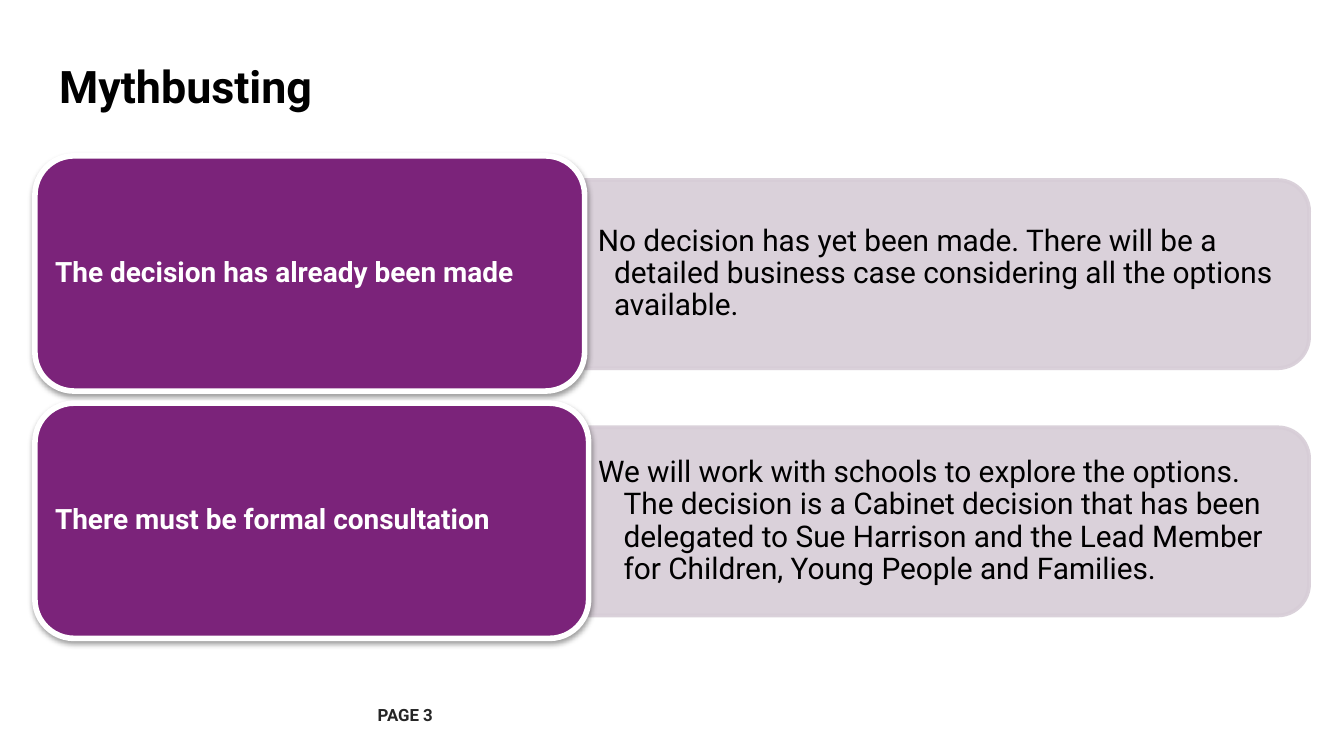
from lxml import etree
from pptx import Presentation
from pptx.dml.color import RGBColor
from pptx.enum.shapes import MSO_SHAPE as Shape
from pptx.enum.text import MSO_ANCHOR as Anchor, PP_ALIGN as Align
from pptx.oxml import parse_xml
from pptx.oxml.ns import nsdecls, qn
from pptx.util import Inches, Pt

COLORS = {
    "card": "7B237A",
    "panel": "D7CDD7",
    "white": "FFFFFF",
    "black": "000000",
    "footer": "262626",
}
TITLE = {"size": Pt(24), "bold": True, "color": "black"}
MYTH = {"size": Pt(15), "bold": True, "color": "white"}
FACT = {"size": Pt(16), "bold": False, "color": "black"}
FOOTER = {"size": Pt(9), "bold": True, "color": "footer"}

ROW_TOP, ROW_PITCH, ROW_HEIGHT = 1.16, 1.84, 1.75
ROW_LEFT, ROW_RIGHT = 0.26, 9.74
ROWS = [
    {
        "myth": "The decision has already been made",
        "fact": "No decision has yet been made. There will be a detailed business "
                "case considering all the options available.",
        "card_width": 4.09, "hang": 0.12, "insets": (0.1, 0.05),
    },
    {
        "myth": "There must be formal consultation",
        "fact": "We will work with schools to explore the options. The decision is "
                "a Cabinet decision that has been delegated to Sue Harrison and the "
                "Lead Member for Children, Young People and Families.",
        "card_width": 4.12, "hang": 0.19, "insets": (0.07, 0.03),
    },
]


def color(name):
    return RGBColor.from_string(COLORS[name])


def write(box, text, style, insets=(0.09, 0.04), hang=0, spacing=None):
    frame = box.text_frame
    across, down = (Inches(inset) for inset in insets)
    layout = {
        "word_wrap": True, "vertical_anchor": Anchor.MIDDLE,
        "margin_left": across, "margin_right": across,
        "margin_top": down, "margin_bottom": down,
    }
    for name, value in layout.items():
        setattr(frame, name, value)
    para = frame.paragraphs[0]
    para.alignment = Align.LEFT
    para.line_spacing = spacing
    if hang:
        props = para._p.get_or_add_pPr()
        props.set("marL", str(Inches(hang)))
        props.set("indent", str(-Inches(hang)))
    span = para.add_run()
    span.text = text
    span.font.name = "Roboto"
    for name, value in style.items():
        if name == "color":
            span.font.color.rgb = color(value)
        else:
            setattr(span.font, name, value)


def add_text(page, left, top, width, height, *args, **options):
    box = page.shapes.add_textbox(*map(Inches, (left, top, width, height)))
    write(box, *args, **options)


def add_outlined(page, kind, box, fill, line, weight):
    shape = page.shapes.add_shape(kind, *map(Inches, box))
    shape.shadow.inherit = False
    shape.fill.solid()
    shape.fill.fore_color.rgb = color(fill)
    shape.line.color.rgb = color(line)
    shape.line.width = Pt(weight)
    return shape


def add_panel(page, left, top, width, height):
    """Draw a panel with rounded right corners: a top-rounded shape turned 90°."""
    box = (left + (width - height) / 2, top + (height - width) / 2, height, width)
    panel = add_outlined(page, Shape.ROUND_2_SAME_RECTANGLE, box, "panel", "panel", 2)
    panel.rotation = 90
    for tint in panel._element.spPr.iter(qn("a:srgbClr")):
        etree.SubElement(tint, qn("a:alpha"), val="90000")


def add_card(page, left, top, width, height):
    card = add_outlined(page, Shape.ROUNDED_RECTANGLE, (left, top, width, height),
                        "card", "white", 3)
    card._element.spPr.find(qn("a:effectLst")).append(parse_xml(
        f'<a:outerShdw {nsdecls("a")} blurRad="{Pt(3.1)}" dist="{Pt(1.6)}" '
        f'dir="5400000" rotWithShape="0"><a:srgbClr val="{COLORS["black"]}">'
        '<a:alpha val="38000"/></a:srgbClr></a:outerShdw>'))


def add_row(page, left, top, right, height, row):
    """Place a myth card with its fact panel beside it."""
    card_width = row["card_width"]
    split = left + card_width
    add_panel(page, split, top + 0.18, right - split, 1.4)
    add_text(page, split, top + 0.25, right - split - 0.07, 1.26, row["fact"], FACT,
             insets=row["insets"], hang=row["hang"], spacing=0.9)
    add_card(page, left, top, card_width, height)
    pad = 0.09
    add_text(page, left + pad, top + pad, card_width - 2 * pad, height - 2 * pad,
             row["myth"], MYTH, insets=(0.06, 0.03), hang=0.19, spacing=0.9)


def add_title(page, left, top, width, height):
    title = page.shapes.title
    title.left, title.top, title.width, title.height = map(
        Inches, (left, top, width, height))
    write(title, "Mythbusting", TITLE)


def main():
    deck = Presentation()
    deck.slide_width = Inches(10)
    deck.slide_height = deck.slide_width * 9 // 16
    page = deck.slides.add_slide(deck.slide_layouts[5])
    add_title(page, 0.35, 0.23, 9, 0.82)
    for index, row in enumerate(ROWS):
        add_row(page, ROW_LEFT, ROW_TOP + index * ROW_PITCH, ROW_RIGHT, ROW_HEIGHT, row)
    add_text(page, 2.72, 5.17, 0.87, 0.3, "PAGE 3", FOOTER)
    deck.save("out.pptx")


if __name__ == "__main__":
    main()
